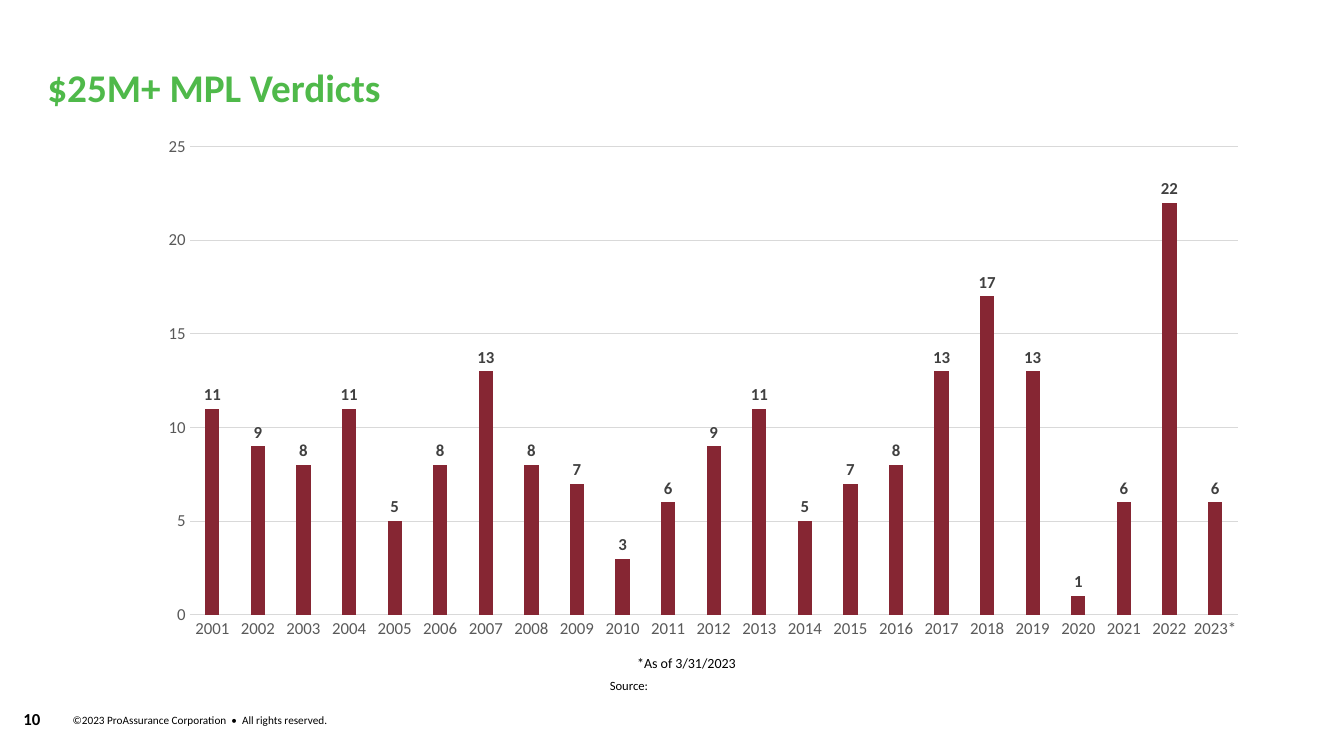
import pptx
import pptx.chart.data
import pptx.dml.color
import pptx.enum.chart
import pptx.enum.text
import pptx.util

Pt = pptx.util.Pt
ANCHOR = pptx.enum.text.MSO_ANCHOR
ALIGN = pptx.enum.text.PP_ALIGN

prs = pptx.Presentation()
prs.slide_width = pptx.util.Inches(13.33)
prs.slide_height = pptx.util.Inches(7.5)
s = prs.slides.add_slide(prs.slide_layouts[6])


def rgb(hex_color):
    return pptx.dml.color.RGBColor.from_string(hex_color)


def area(left, top, width, height):
    """Turn percentages of the slide's size into a position and size."""
    col, row = prs.slide_width / 100, prs.slide_height / 100
    return int(left * col), int(top * row), int(width * col), int(height * row)


# Text: wording, area, size, bold, colour, alignment, anchor, side and top insets in points
texts = [
    ("©2023 ProAssurance Corporation  •  All rights reserved.",
     (5.4, 94.4, 31.3, 1.73), 8, False, "000000", ALIGN.LEFT, ANCHOR.MIDDLE, 0, 0),
    ("10", (0, 93.07, 4.73, 4), 12, True, "000000", ALIGN.CENTER, ANCHOR.MIDDLE, 0, 3.6),
    ("*As of 3/31/2023", (42, 85.87, 18.15, 4.4), 10, False, "000000",
     ALIGN.CENTER, ANCHOR.TOP, 0, 3.6),
    ("$25M+ MPL Verdicts", (3.53, 6.4, 90.23, 10.27), 28, True, "4FB94A",
     ALIGN.LEFT, ANCHOR.MIDDLE, 0, 7.2),
    ("Source:", (44.63, 89.07, 4.73, 3.33), 9, False, "000000",
     ALIGN.LEFT, ANCHOR.TOP, 7.2, 3.6),
]
for wording, place, size, bold, color, align, anchor, side, edge in texts:
    tf = s.shapes.add_textbox(*area(*place)).text_frame
    frame_format = {
        "word_wrap": True, "vertical_anchor": anchor,
        "margin_left": Pt(side), "margin_right": Pt(side),
        "margin_top": Pt(edge), "margin_bottom": Pt(edge),
    }
    for name, value in frame_format.items():
        setattr(tf, name, value)
    p = tf.paragraphs[0]
    p.alignment = align
    r = p.add_run()
    r.text = wording
    for name, value in {"name": "Calibri", "size": Pt(size), "bold": bold}.items():
        setattr(r.font, name, value)
    r.font.color.rgb = rgb(color)

# Verdicts per year
verdicts = [11, 9, 8, 11, 5, 8, 13, 8, 7, 3, 6, 9, 11, 5, 7, 8, 13, 17, 13, 1, 6, 22, 6]
data = pptx.chart.data.CategoryChartData()
data.categories = [str(year) for year in range(2001, 2023)] + ["2023*"]
data.add_series("Verdicts", verdicts)
chart = s.shapes.add_chart(
    pptx.enum.chart.XL_CHART_TYPE.COLUMN_CLUSTERED,
    *area(10.88, 16.67, 82.88, 69.2), data).chart
chart.has_legend = False
chart.has_title = False

plot = chart.plots[0]
plot_format = {"gap_width": 219, "overlap": -27, "vary_by_categories": False,
               "has_data_labels": True}
for name, value in plot_format.items():
    setattr(plot, name, value)
bars = plot.series[0].format.fill
bars.solid()
bars.fore_color.rgb = rgb("862633")

labels = plot.data_labels
labels.show_value = True
labels.position = pptx.enum.chart.XL_LABEL_POSITION.OUTSIDE_END

years, counts = chart.category_axis, chart.value_axis
for axis in (years, counts):
    axis.major_tick_mark = axis.minor_tick_mark = pptx.enum.chart.XL_TICK_MARK.NONE
for name, value in {"minimum_scale": 0, "maximum_scale": 25, "major_unit": 5}.items():
    setattr(counts, name, value)
counts.format.line.fill.background()
for line in (years.format.line, counts.major_gridlines.format.line):
    line.color.rgb = rgb("D9D9D9")
    line.width = Pt(0.75)

chart_fonts = [
    (chart.font, 10, False, "000000"),
    (labels.font, 12, True, "404040"),
    (years.tick_labels.font, 12, False, "595959"),
    (counts.tick_labels.font, 12, False, "595959"),
]
for font, size, bold, color in chart_fonts:
    for name, value in {"name": "Calibri", "size": Pt(size), "bold": bold}.items():
        setattr(font, name, value)
    font.color.rgb = rgb(color)

prs.save("out.pptx")
